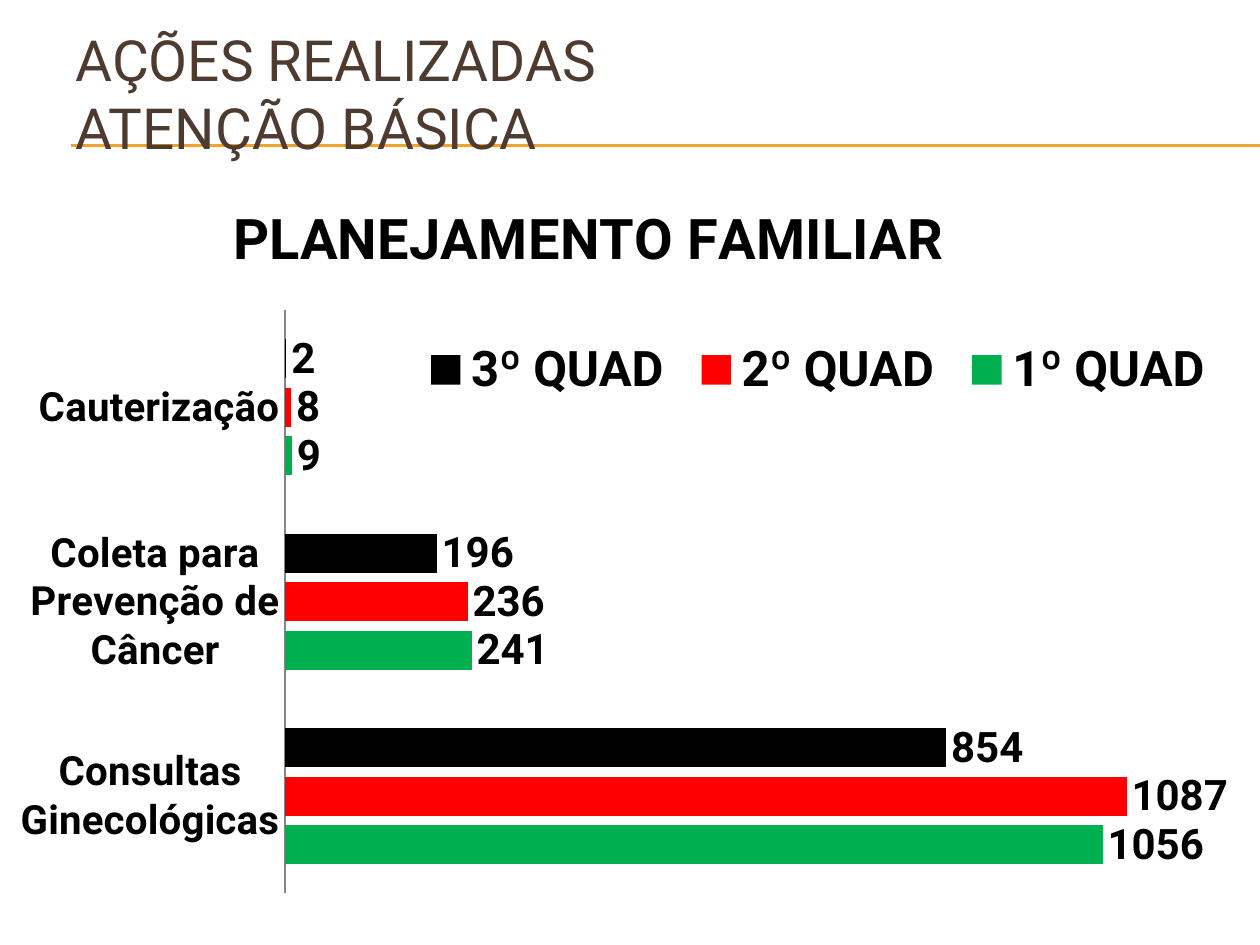
import pptx
import pptx.chart.data
import pptx.dml.color
import pptx.enum.chart
import pptx.enum.shapes
import pptx.enum.text
import pptx.oxml
import pptx.oxml.ns
import pptx.util

SCALE = 914400 / 126  # EMU in one px
FONT = "Roboto"
COLORS = {
    "title": "4E3B30", "rule": "F0A22E", "text": "000000", "axis": "868686",
    "first": "00B050", "second": "FF0000", "third": "000000",
}
CATEGORIES = ["Consultas Ginecológicas", "Coleta para Prevenção de Câncer", "Cauterização"]
SERIES = [
    ("1º QUAD", (1056, 241, 9), "first"),
    ("2º QUAD", (1087, 236, 8), "second"),
    ("3º QUAD", (854, 196, 2), "third"),
]


def px(length):
    return pptx.util.Emu(round(length * SCALE))


def rgb(name):
    return pptx.dml.color.RGBColor.from_string(COLORS[name])


def set_values(target, values):
    for name, value in values.items():
        setattr(target, name, value)


def set_font(font, size, bold=False, color="text"):
    set_values(font, {"name": FONT, "size": pptx.util.Pt(size), "bold": bold})
    font.color.rgb = rgb(color)


def set_layout(parent, index, fractions, inner=False):
    """Give a chart part a manual layout, in fractions of the chart box."""
    for old in parent.findall(pptx.oxml.ns.qn("c:layout")):
        parent.remove(old)
    target = '<c:layoutTarget val="inner"/>' if inner else ""
    modes = "".join(f'<c:{axis}Mode val="edge"/>' for axis in "xy")
    sizes = "".join(f'<c:{key} val="{value}"/>' for key, value in zip("xywh", fractions))
    parent.insert(index, pptx.oxml.parse_xml(
        f'<c:layout {pptx.oxml.ns.nsdecls("c")}><c:manualLayout>'
        f"{target}{modes}{sizes}</c:manualLayout></c:layout>"))


def add_header(slide, left, top, width, height):
    # Double rule, running to the right edge of the slide
    for offset in (106, 107):
        rule = slide.shapes.add_connector(
            pptx.enum.shapes.MSO_CONNECTOR.STRAIGHT,
            px(left + 8), px(top + offset), px(left + width), px(top + offset))
        rule.line.color.rgb = rgb("rule")
        rule.line.width = pptx.util.Pt(0.75)
        rule._element.spPr.append(
            pptx.oxml.parse_xml(f'<a:effectLst {pptx.oxml.ns.nsdecls("a")}/>'))

    # Title in two lines
    title = slide.shapes.add_textbox(px(left), px(top), px(width), px(height))
    frame = title.text_frame
    set_values(frame, {
        "word_wrap": True,
        "vertical_anchor": pptx.enum.text.MSO_ANCHOR.MIDDLE,
    })
    paragraph = frame.paragraphs[0]
    paragraph.text = "AÇÕES REALIZADAS\vATENÇÃO BÁSICA"
    for run in paragraph.runs:
        set_font(run.font, 32.4, color="title")


def add_family_planning_chart(slide, left, top, width, height):
    data = pptx.chart.data.CategoryChartData()
    data.categories = CATEGORIES
    for name, values, _ in SERIES:
        data.add_series(name, values)
    chart = slide.shapes.add_chart(
        pptx.enum.chart.XL_CHART_TYPE.BAR_CLUSTERED,
        px(left), px(top), px(width), px(height), data).chart
    set_font(chart.font, 10)

    # Chart title
    chart.has_title = True
    paragraph = chart.chart_title.text_frame.paragraphs[0]
    paragraph.text = "PLANEJAMENTO FAMILIAR"
    set_font(paragraph.runs[0].font, 32, bold=True)
    set_layout(chart.chart_title._element, 1, (0.18, 0.03))

    # Legend
    chart.has_legend = True
    set_values(chart.legend, {
        "position": pptx.enum.chart.XL_LEGEND_POSITION.TOP,
        "include_in_layout": False,
    })
    set_font(chart.legend.font, 28, bold=True)
    set_layout(chart.legend._element, 1, (0.33, 0.22, 0.66, 0.1))

    # Axes
    none = pptx.enum.chart.XL_TICK_MARK.NONE
    set_values(chart.category_axis, {"major_tick_mark": none, "minor_tick_mark": none})
    set_font(chart.category_axis.tick_labels.font, 23, bold=True)
    chart.category_axis.format.line.color.rgb = rgb("axis")
    set_values(chart.value_axis, {
        "visible": False, "has_major_gridlines": False,
        "minimum_scale": 0, "maximum_scale": 1200,
    })

    # Bars and their values
    plot = chart.plots[0]
    set_values(plot, {"gap_width": 150, "overlap": -25, "vary_by_categories": False})
    set_layout(chart._chartSpace.chart.plotArea, 0, (0.23, 0.19, 0.75, 0.78), inner=True)
    for series, (_, _, color) in zip(plot.series, SERIES):
        series.format.fill.solid()
        series.format.fill.fore_color.rgb = rgb(color)
        set_values(series.data_labels, {
            "show_value": True,
            "position": pptx.enum.chart.XL_LABEL_POSITION.OUTSIDE_END,
        })
        set_font(series.data_labels.font, 24, bold=True)


def main():
    presentation = pptx.Presentation()
    set_values(presentation, {"slide_width": px(1260), "slide_height": px(945)})
    slide = presentation.slides.add_slide(presentation.slide_layouts[6])
    add_header(slide, 63, 39, 1197, 108)
    add_family_planning_chart(slide, 0, 168, 1239, 748)
    presentation.save("out.pptx")


if __name__ == "__main__":
    main()
